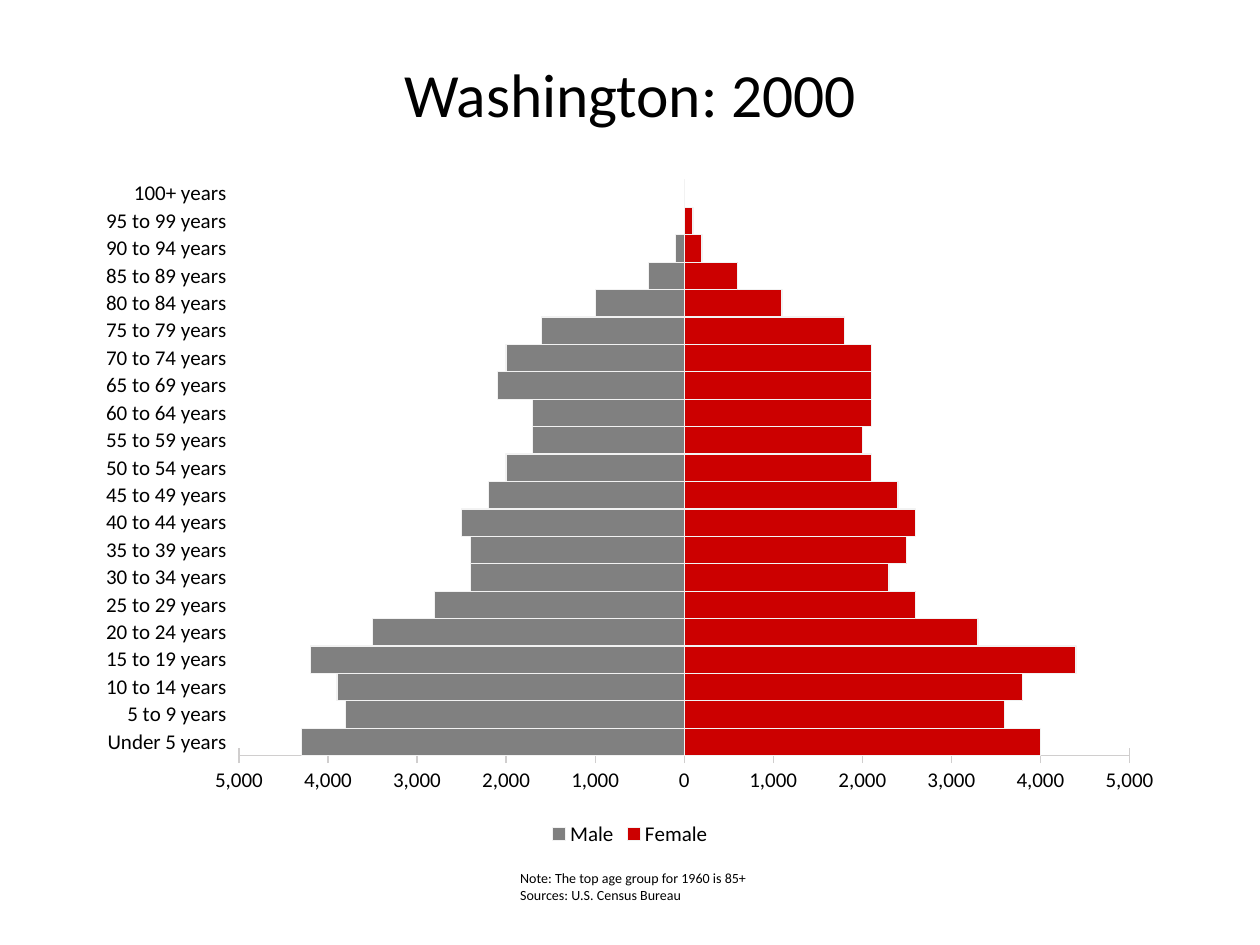
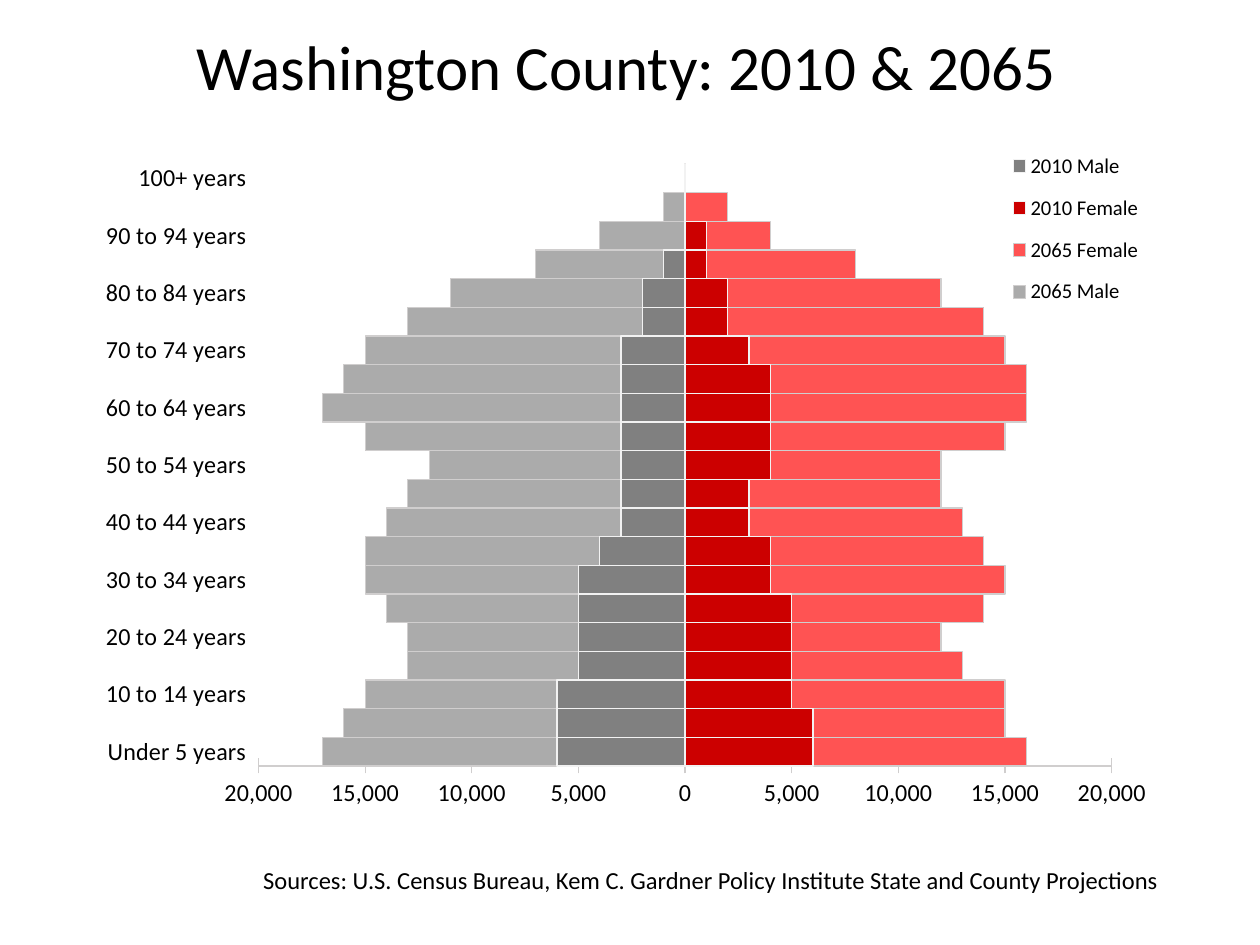
"""Build two population pyramid slides for Washington County."""
from lxml import etree
from pptx import Presentation
from pptx import util as u
from pptx.chart import data as chart_data
from pptx.dml import color as dml
from pptx.enum import chart as ch, text as tx
from pptx.oxml import ns

COLORS = {
    "text": "000000", "male": "808080", "female": "CC0000",
    "male_2065": "ABABAB", "female_2065": "FF5353",
    "pale": "F2F2F2", "axis": "D0CECE", "zero_line": "D9D9D9",
}
FONT = "Calibri"
AGES = (["Under 5 years"]
        + [f"{age} to {age + 4} years" for age in range(5, 100, 5)]
        + ["100+ years"])


def rgb(name):
    """Return the named colour."""
    return dml.RGBColor.from_string(COLORS[name])


def style_font(font, size):
    """Apply the deck's typeface and text colour."""
    font.name, font.size = FONT, u.Pt(size)
    font.color.rgb = rgb("text")


def write(frame, content, size=12, align=None, spacing=None, wrap=True,
          inset=None, anchor=tx.MSO_ANCHOR.TOP):
    """Fill a text frame with one paragraph per line of content."""
    frame.auto_size = tx.MSO_AUTO_SIZE.NONE
    frame.word_wrap, frame.vertical_anchor = wrap, anchor
    if inset is not None:
        frame.margin_left = frame.margin_right = u.Inches(inset)
        frame.margin_top = frame.margin_bottom = u.Inches(inset)
    frame.text = content
    for paragraph in frame.paragraphs:
        paragraph.alignment, paragraph.line_spacing = align, spacing
        for run in paragraph.runs:
            style_font(run.font, size)


def place(parent, index, box, inner=False):
    """Give a chart part a manual layout in fractions of the chart."""
    for old in parent.findall(ns.qn("c:layout")):
        parent.remove(old)
    layout = etree.Element(ns.qn("c:layout"))
    manual = etree.SubElement(layout, ns.qn("c:manualLayout"))
    settings = [("layoutTarget", "inner")] if inner else []
    settings += [("xMode", "edge"), ("yMode", "edge"), *zip("xywh", box)]
    for tag, value in settings:
        etree.SubElement(manual, ns.qn(f"c:{tag}")).set("val", str(value))
    parent.insert(index, layout)


class PyramidDeck:
    """Hold the presentation, its style and the current slide."""

    def __init__(self):
        """Start a 10 by 7.5 inch presentation."""
        self.prs = Presentation()
        self.prs.slide_width, self.prs.slide_height = u.Inches(10), u.Inches(7.5)
        self.slide = None

    def new_slide(self):
        """Add a slide with only a title."""
        self.slide = self.prs.slides.add_slide(self.prs.slide_layouts[5])

    def title(self, content, box, **style):
        """Move and fill the title placeholder."""
        title = self.slide.shapes.title
        title.left, title.top, title.width, title.height = map(u.Inches, box)
        write(title.text_frame, content, align=tx.PP_ALIGN.CENTER,
              anchor=tx.MSO_ANCHOR.MIDDLE, **style)

    def note(self, content, box, size):
        """Add the source note."""
        note = self.slide.shapes.add_textbox(*map(u.Inches, box))
        write(note.text_frame, content, size=size)

    def pyramid(self, box, series, limit, step, size, plot_box,
                legend_at, legend_box=None, label_skip=1):
        """Add a population pyramid from (name, values, fill, line) rows."""
        data = chart_data.CategoryChartData()
        data.categories = AGES
        for name, values, _, _ in series:
            data.add_series(name, values)
        chart = self.slide.shapes.add_chart(
            ch.XL_CHART_TYPE.BAR_CLUSTERED, *map(u.Inches, box), data).chart
        chart.has_title = False
        style_font(chart.font, size)
        plot = chart.plots[0]
        plot.gap_width, plot.overlap, plot.vary_by_categories = 0, 100, False
        for bars, (_, _, fill, line) in zip(plot.series, series):
            bars.invert_if_negative = False
            bars.format.fill.solid()
            bars.format.fill.fore_color.rgb = rgb(fill)
            bars.format.line.color.rgb = rgb(line)
            bars.format.line.width = u.Pt(0.75)
        self.axes(chart, limit, step, size, label_skip)
        self.legend(chart, legend_at, legend_box)
        place(chart.plots[0]._element.getparent(), 0, plot_box, inner=True)

    def axes(self, chart, limit, step, size, label_skip):
        """Format the age and population axes."""
        ages, people = chart.category_axis, chart.value_axis
        for axis, line in ((ages, "zero_line"), (people, "axis")):
            axis.has_major_gridlines = False
            axis.minor_tick_mark = ch.XL_TICK_MARK.NONE
            axis.format.line.color.rgb = rgb(line)
            axis.format.line.width = u.Pt(0.75)
            style_font(axis.tick_labels.font, size)
        ages.major_tick_mark = ch.XL_TICK_MARK.NONE
        ages.tick_label_position = ch.XL_TICK_LABEL_POSITION.LOW
        skip = etree.Element(ns.qn("c:tickLblSkip"), val=str(label_skip))
        ages._element.find(ns.qn("c:noMultiLvlLbl")).addprevious(skip)
        people.major_tick_mark = ch.XL_TICK_MARK.CROSS
        people.minimum_scale, people.maximum_scale = -limit, limit
        people.major_unit = step
        people.tick_labels.number_format = "#,##0;[Black]#,##0"
        people.tick_labels.number_format_is_linked = False

    def legend(self, chart, position, box):
        """Show the legend, at a fixed place when a box is given."""
        chart.has_legend = True
        chart.legend.position = position
        chart.legend.include_in_layout = box is not None
        style_font(chart.legend.font, 12)
        if box:
            place(chart.legend._element, 1, box)


def thousands(*values, sign=1):
    """Scale values given in thousands, negative for the left side."""
    return [sign * round(value * 1000) for value in values]


def main():
    """Build both slides and save them."""
    deck = PyramidDeck()

    deck.new_slide()
    deck.title("Washington: 2000", (0.69, 0.4, 8.62, 0.75), size=35.1, spacing=0.9)
    deck.note("Note: The top age group for 1960 is 85+\nSources: U.S. Census Bureau",
              (4.03, 6.85, 5.81, 0.37), size=8)
    female_2000 = thousands(4, 3.6, 3.8, 4.4, 3.3, 2.6, 2.3, 2.5, 2.6, 2.4, 2.1, 2,
                            2.1, 2.1, 2.1, 1.8, 1.1, 0.6, 0.2, 0.1, 0)
    male_2000 = thousands(4.3, 3.8, 3.9, 4.2, 3.5, 2.8, 2.4, 2.4, 2.5, 2.2, 2, 1.7,
                          1.7, 2.1, 2, 1.6, 1, 0.4, 0.1, 0, 0, sign=-1)
    deck.pyramid(
        (0.69, 1.32, 8.62, 5.44),
        [("Female", female_2000, "female", "pale"),
         ("Male", male_2000, "male", "pale")],
        limit=5000, step=1000, size=12, plot_box=(0.14, 0.02, 0.82, 0.84),
        legend_at=ch.XL_LEGEND_POSITION.BOTTOM)

    deck.new_slide()
    deck.title("Washington County: 2010 & 2065", (1.53, 0.21, 6.88, 0.61),
               size=36, wrap=False, inset=0)
    deck.note("Sources: U.S. Census Bureau, Kem C. Gardner Policy Institute "
              "State and County Projections", (1.99, 6.82, 8.01, 0.34), size=14)
    male_2065 = thousands(17, 16, 15, 13, 13, 14, 15, 15, 14, 13, 12, 15, 17, 16,
                          15, 13, 11, 7, 4, 1, 0, sign=-1)
    female_2065 = thousands(16, 15, 15, 13, 12, 14, 15, 14, 13, 12, 12, 15, 16, 16,
                            15, 14, 12, 8, 4, 2, 0)
    female_2010 = thousands(6, 6, 5, 5, 5, 5, 4, 4, 3, 3, 4, 4, 4, 4, 3, 2, 2, 1,
                            1, 0, 0)
    male_2010 = thousands(6, 6, 6, 5, 5, 5, 5, 4, 3, 3, 3, 3, 3, 3, 3, 2, 2, 1,
                          0, 0, 0, sign=-1)
    deck.pyramid(
        (0.84, 1.03, 8.31, 5.43),
        [("2065 Male", male_2065, "male_2065", "axis"),
         ("2065 Female", female_2065, "female_2065", "axis"),
         ("2010 Female", female_2010, "female", "pale"),
         ("2010 Male", male_2010, "male", "pale")],
        limit=20000, step=5000, size=14, plot_box=(0.13, 0.05, 0.83, 0.88),
        legend_at=ch.XL_LEGEND_POSITION.RIGHT,
        legend_box=(0.85, 0.01, 0.15, 0.27), label_skip=2)

    deck.prs.save("out.pptx")


if __name__ == "__main__":
    main()
